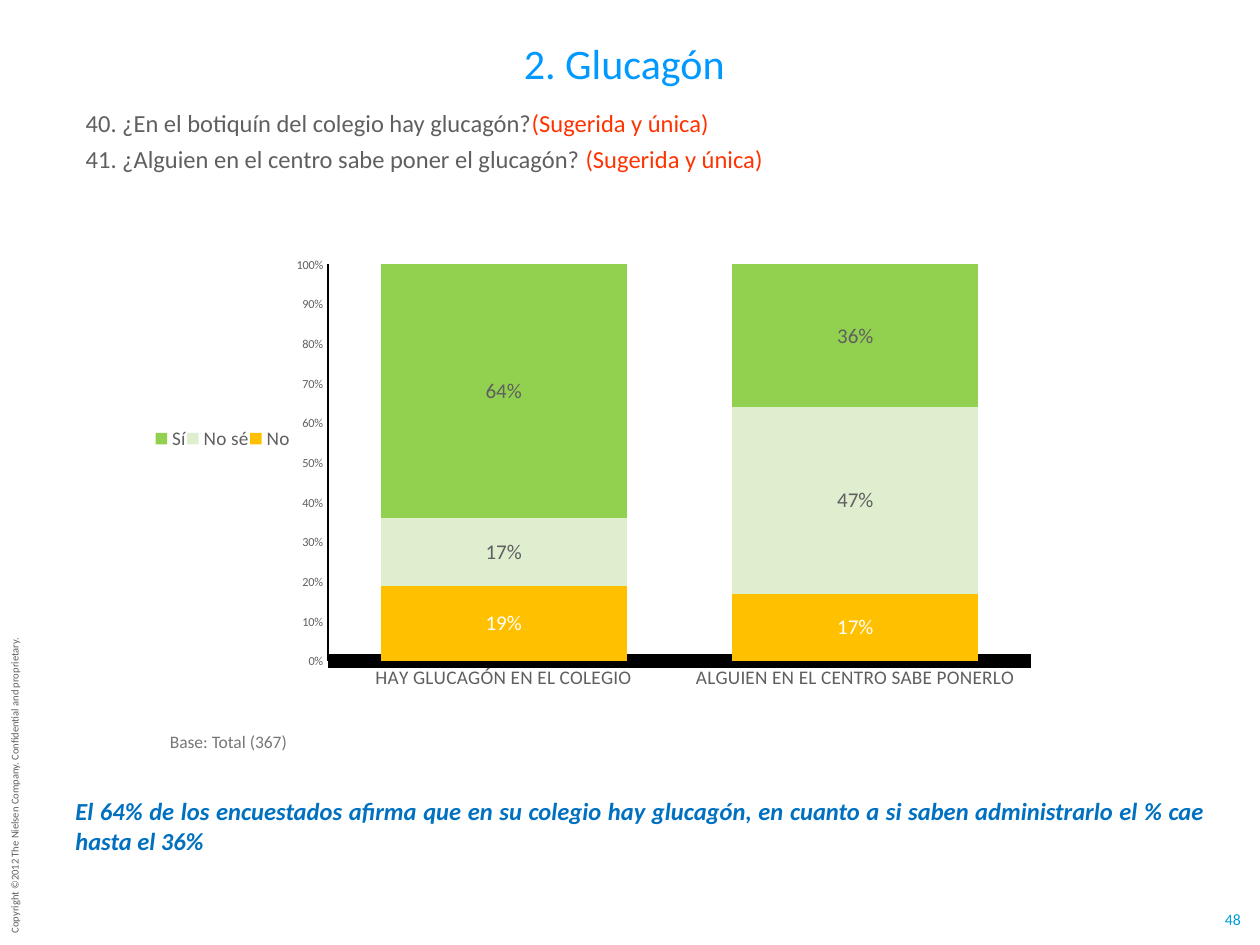
from dataclasses import dataclass

import pptx
import pptx.chart.data
import pptx.dml.color
import pptx.enum.chart
import pptx.enum.shapes
import pptx.enum.text
import pptx.oxml
import pptx.oxml.ns
import pptx.util

Align = pptx.enum.text.PP_ALIGN
Anchor = pptx.enum.text.MSO_ANCHOR
FONT = "Calibri"
GREY, RED = "5F5F5F", "FF3300"
WIDTH, HEIGHT = pptx.util.Inches(10), pptx.util.Inches(7.5)


@dataclass(frozen=True)
class Frame:
    """A rectangle in percent of the slide's width and height."""
    left: float
    top: float
    width: float
    height: float

    def lengths(self) -> list[int]:
        """Return left, top, width and height in EMU."""
        shares = (self.left, self.top, self.width, self.height)
        return [round(share * side / 100) for share, side in zip(shares, (WIDTH, HEIGHT) * 2)]


@dataclass(frozen=True)
class Answer:
    """One answer series of the chart, with its colours."""
    name: str
    shares: tuple[float, ...]
    fill: str
    label: str


QUESTIONS = [
    [("40. ¿En el botiquín del colegio hay glucagón?", GREY), ("(Sugerida y única)", RED)],
    [("41. ¿Alguien en el centro sabe poner el glucagón? ", GREY), ("(Sugerida y única)", RED)],
]
TOPICS = ["HAY GLUCAGÓN EN EL COLEGIO", "ALGUIEN EN EL CENTRO SABE PONERLO"]
ANSWERS = [
    Answer("No", (0.19, 0.17), "FFC000", "FFFFFF"),
    Answer("No sé", (0.17, 0.47), "E0EED0", GREY),
    Answer("Sí", (0.64, 0.36), "92D050", GREY),
]


def rgb(code: str) -> pptx.dml.color.RGBColor:
    """Turn a hex string into a colour."""
    return pptx.dml.color.RGBColor.from_string(code)


def style(font, size: float, color: str, bold: bool = False, italic: bool = False) -> None:
    """Format a font."""
    font.name, font.size, font.color.rgb = FONT, pptx.util.Pt(size), rgb(color)
    font.bold, font.italic = bold, italic


def write(shape, paragraphs, *, size, align=Align.LEFT, anchor=Anchor.TOP, wrap=True,
          inset=(0.1, 0.05), hanging=0.0, gap=0.0, bold=False, italic=False) -> None:
    """Fill a shape with paragraphs made of (text, colour) runs."""
    frame = shape.text_frame
    frame.auto_size = pptx.enum.text.MSO_AUTO_SIZE.NONE
    frame.word_wrap, frame.vertical_anchor = wrap, anchor
    frame.margin_left = frame.margin_right = pptx.util.Inches(inset[0])
    frame.margin_top = frame.margin_bottom = pptx.util.Inches(inset[1])
    indent = pptx.util.Inches(hanging)
    for index, runs in enumerate(paragraphs):
        paragraph = frame.add_paragraph() if index else frame.paragraphs[0]
        paragraph.alignment = align
        paragraph.space_before = pptx.util.Pt(gap if index else 0)
        properties = paragraph._p.get_or_add_pPr()
        properties.set("marL", str(indent))
        properties.set("indent", str(-indent))
        properties.append(pptx.oxml.parse_xml(f"<a:buNone {pptx.oxml.ns.nsdecls('a')}/>"))
        for text, color in runs:
            run = paragraph.add_run()
            run.text = text
            style(run.font, size, color, bold, italic)


def place(shape, frame: Frame):
    """Move and size a shape to its frame."""
    shape.left, shape.top, shape.width, shape.height = frame.lengths()
    return shape


def add_layout(part, x: float, y: float, w: float, h: float, inner: bool = False) -> None:
    """Fix a plot area or legend at shares of the chart's size."""
    for old in part.findall(pptx.oxml.ns.qn("c:layout")):
        part.remove(old)
    target = '<c:layoutTarget val="inner"/>' if inner else ""
    modes = "".join(f'<c:{axis}Mode val="edge"/>' for axis in "xy")
    values = "".join(f'<c:{key} val="{value}"/>' for key, value in zip("xywh", (x, y, w, h)))
    layout = pptx.oxml.parse_xml(
        f"<c:layout {pptx.oxml.ns.nsdecls('c')}><c:manualLayout>"
        f"{target}{modes}{values}</c:manualLayout></c:layout>")
    position = part.find(pptx.oxml.ns.qn("c:legendPos"))
    part.insert(0 if position is None else 1, layout)


def format_axis(axis, size: float, line_width: float) -> None:
    """Give an axis its font and black line, without grid or ticks."""
    axis.has_major_gridlines = False
    axis.major_tick_mark = axis.minor_tick_mark = pptx.enum.chart.XL_TICK_MARK.NONE
    style(axis.tick_labels.font, size, GREY)
    axis.format.line.color.rgb = rgb("000000")
    axis.format.line.width = pptx.util.Pt(line_width)


def add_answer_chart(slide, frame: Frame) -> None:
    """Draw the stacked shares of each answer."""
    data = pptx.chart.data.CategoryChartData(number_format="0%")
    data.categories = TOPICS
    for answer in ANSWERS:
        data.add_series(answer.name, answer.shares)
    kind = pptx.enum.chart.XL_CHART_TYPE.COLUMN_STACKED_100
    chart = slide.shapes.add_chart(kind, *frame.lengths(), data).chart
    style(chart.font, 10, GREY)
    chart.has_title = False
    format_axis(chart.category_axis, 11, 7.75)
    format_axis(chart.value_axis, 7, 0.75)
    chart.value_axis.maximum_scale, chart.value_axis.major_unit = 1, 0.1
    chart.value_axis.tick_labels.number_format = "0%"
    chart.value_axis.tick_labels.number_format_is_linked = False
    chart.has_legend = True
    chart.legend.position = pptx.enum.chart.XL_LEGEND_POSITION.LEFT
    chart.legend.include_in_layout = False
    style(chart.legend.font, 11, GREY)
    add_layout(chart.legend._element, 0.02, 0.2, 0.15, 0.46)
    add_layout(chart._chartSpace.chart.plotArea, 0.21, 0.07, 0.77, 0.82, inner=True)
    plot = chart.plots[0]
    plot.gap_width, plot.overlap, plot.vary_by_categories = 43, 100, False
    for series, answer in zip(plot.series, ANSWERS):
        series.format.fill.solid()
        series.format.fill.fore_color.rgb = rgb(answer.fill)
        labels = series.data_labels
        labels.show_value = True
        labels.number_format, labels.number_format_is_linked = "0%", False
        labels.position = pptx.enum.chart.XL_LABEL_POSITION.CENTER
        style(labels.font, 12, answer.label)


def main() -> None:
    """Build the slide and save it."""
    deck = pptx.Presentation()
    deck.slide_width, deck.slide_height = WIDTH, HEIGHT
    slide = deck.slides.add_slide(deck.slide_layouts[1])
    shapes = slide.shapes

    copyright_line = shapes.add_textbox(*Frame(-11.8, 81.47, 25.9, 2.67).lengths())
    copyright_line.rotation = 270
    write(copyright_line, [[("Copyright ©2012 The Nielsen Company. Confidential and proprietary.", GREY)]],
          size=6, wrap=False)
    page_number = shapes.add_textbox(*Frame(97.1, 96.27, 1.5, 2).lengths())
    write(page_number, [[("48", "009DD9")]], size=9, align=Align.CENTER,
          anchor=Anchor.MIDDLE, wrap=False, inset=(0, 0))

    title = place(shapes.title, Frame(8.3, 3.33, 82.5, 6.67))
    write(title, [[("2. Glucagón", "0099FF")]], size=24, align=Align.CENTER)
    questions = place(slide.placeholders[1], Frame(5.8, 10.8, 94.2, 7.33))
    write(questions, QUESTIONS, size=14, hanging=0.1, gap=3.5)
    conclusion = shapes.add_textbox(*Frame(5, 83.6, 91.7, 7.6).lengths())
    write(conclusion, [[("El 64% de los encuestados afirma que en su colegio hay glucagón, "
                         "en cuanto a si saben administrarlo el % cae hasta el 36%", "0070C0")]],
          size=14, align=Align.JUSTIFY, bold=True, italic=True)

    add_answer_chart(slide, Frame(10.8, 24.4, 72.5, 51.2))

    base = shapes.add_shape(pptx.enum.shapes.MSO_SHAPE.RECTANGLE,
                            *Frame(12.5, 76.67, 15, 3.6).lengths())
    base.shadow.inherit = False
    base.fill.solid()
    base.fill.fore_color.rgb = rgb("FFFFFF")
    base.line.fill.background()
    write(base, [[("Base: Total (367)", "777777")]], size=10)
    deck.save("out.pptx")


if __name__ == "__main__":
    main()
